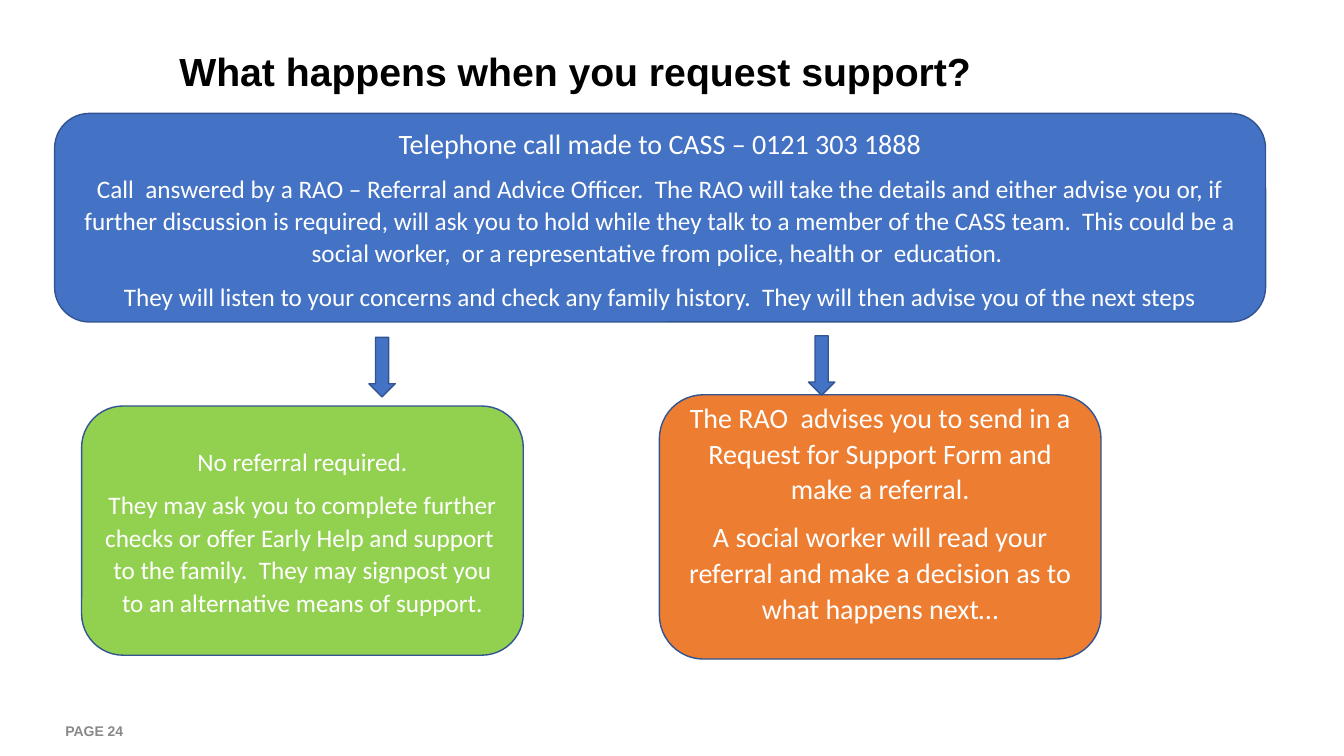
from dataclasses import dataclass

from pptx import Presentation
from pptx.dml.color import RGBColor
from pptx.enum.shapes import MSO_SHAPE
from pptx.enum.text import MSO_ANCHOR, PP_ALIGN
from pptx.util import Pt

ROUNDED = MSO_SHAPE.ROUNDED_RECTANGLE
DOWN_ARROW = MSO_SHAPE.DOWN_ARROW
MIDDLE = MSO_ANCHOR.MIDDLE
LEFT, CENTER = PP_ALIGN.LEFT, PP_ALIGN.CENTER
BLANK_LAYOUT = 6


@dataclass(frozen=True)
class Theme:
    heading_font: str = "Arial"
    body_font: str = "Calibri"
    black: str = "000000"
    white: str = "FFFFFF"
    grey: str = "898989"
    blue: str = "4472C4"
    outline: str = "325491"
    green: str = "92D050"
    orange: str = "ED7D31"
    title_size: float = 28
    lead_size: float = 20
    body_size: float = 18
    footer_size: float = 10


THEME = Theme()


def write(frame, paragraphs, font=THEME.body_font, color=THEME.white,
          bold=False, align=CENTER, line_spacing=1.07, space_after=8):
    """Fill a text frame with (text, size) paragraphs."""
    frame.word_wrap = True
    frame.vertical_anchor = MIDDLE
    for index, (text, size) in enumerate(paragraphs):
        paragraph = frame.add_paragraph() if index else frame.paragraphs[0]
        paragraph.text = text
        paragraph.alignment = align
        paragraph.line_spacing = line_spacing
        paragraph.space_after = Pt(space_after)
        paragraph.font.name = font
        paragraph.font.size = Pt(size)
        paragraph.font.bold = bold
        paragraph.font.color.rgb = RGBColor.from_string(color)


def add_heading(slide, box, text, size, color):
    label = slide.shapes.add_textbox(*map(Pt, box))
    write(label.text_frame, [(text, size)], font=THEME.heading_font, color=color,
          bold=True, align=LEFT, line_spacing=1.0, space_after=0)


def add_outlined(slide, kind, box, fill):
    shape = slide.shapes.add_shape(kind, *map(Pt, box))
    shape.shadow.inherit = False
    shape.fill.solid()
    shape.fill.fore_color.rgb = RGBColor.from_string(fill)
    shape.line.color.rgb = RGBColor.from_string(THEME.outline)
    shape.line.width = Pt(1)
    return shape


def add_step(slide, box, fill, paragraphs, bottom_inset=3.6):
    step = add_outlined(slide, ROUNDED, box, fill)
    step.text_frame.margin_bottom = Pt(bottom_inset)
    write(step.text_frame, paragraphs)


def main():
    prs = Presentation()
    prs.slide_width, prs.slide_height = Pt(960), Pt(540)
    slide = prs.slides.add_slide(prs.slide_layouts[BLANK_LAYOUT])

    add_heading(slide, (39.6, 507.6, 224, 28.8), "PAGE 24",
                THEME.footer_size, THEME.grey)
    add_heading(slide, (121, 11.5, 702, 78.5),
                "What happens when you request support?",
                THEME.title_size, THEME.black)

    add_step(slide, (39, 81, 865, 149), THEME.blue, [
        ("Telephone call made to CASS – 0121 303 1888", THEME.lead_size),
        ("Call  answered by a RAO – Referral and Advice Officer.  The RAO will "
         "take the details and either advise you or, if further discussion is "
         "required, will ask you to hold while they talk to a member of the CASS "
         "team.  This could be a social worker,  or a representative from police, "
         "health or  education. ", THEME.body_size),
        ("They will listen to your concerns and check any family history.  They "
         "will then advise you of the next steps", THEME.body_size),
    ])
    add_step(slide, (58.3, 290, 315.5, 178), THEME.green, [
        ("No referral required.", THEME.body_size),
        ("They may ask you to complete further checks or offer Early Help and "
         "support  to the family.  They may signpost you to an alternative means "
         "of support.", THEME.body_size),
    ])
    add_step(slide, (471, 282, 315.5, 188.8), THEME.orange, [
        ("The RAO  advises you to send in a Request for Support Form and make a "
         "referral.", THEME.lead_size),
        ("A social worker will read your referral and make a decision as to what "
         "happens next…", THEME.lead_size),
    ], bottom_inset=26)

    for left, top in ((263.5, 241), (577.5, 239.8)):
        add_outlined(slide, DOWN_ARROW, (left, top, 18.8, 42.5), THEME.blue)

    prs.save("out.pptx")


if __name__ == "__main__":
    main()
